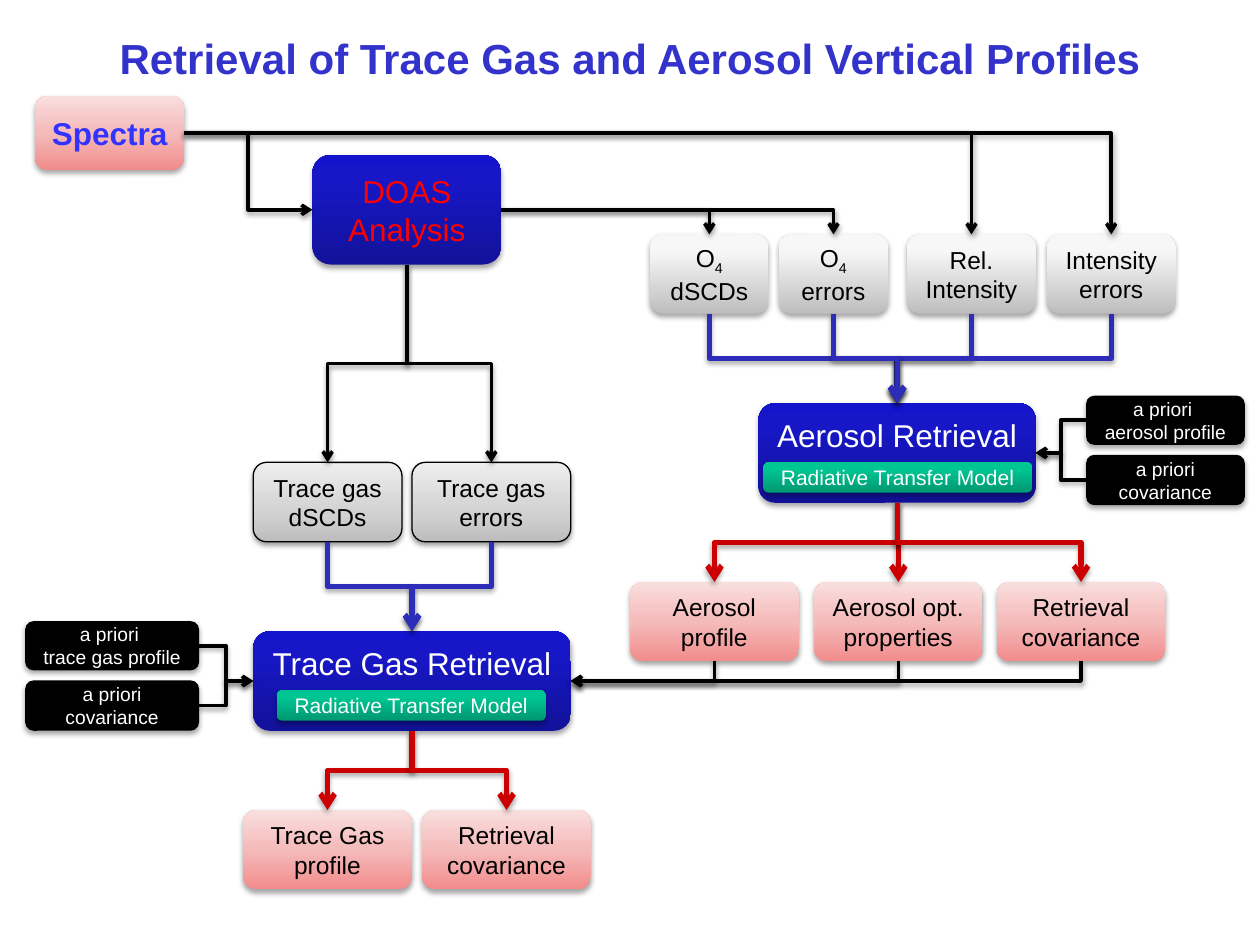
from dataclasses import dataclass
from typing import NamedTuple

import lxml.etree
import pptx
import pptx.dml.color
import pptx.enum.shapes
import pptx.enum.text
import pptx.oxml.ns
import pptx.util

Inches = pptx.util.Inches
Pt = pptx.util.Pt
qn = pptx.oxml.ns.qn
MID = pptx.enum.text.MSO_ANCHOR.MIDDLE
CENTER = pptx.enum.text.PP_ALIGN.CENTER
FORM = pptx.enum.shapes.MSO_SHAPE.FLOWCHART_ALTERNATE_PROCESS
ELBOW = pptx.enum.shapes.MSO_CONNECTOR.ELBOW


@dataclass(frozen=True)
class Look:
    stops: tuple
    size: int
    ink: str = "000000"
    bold: bool = False
    edge: bool = False
    foot: float = 0.05


@dataclass(frozen=True)
class Box:
    text: str
    look: Look
    x: float
    y: float
    w: float
    h: float

    def side(self, name: str) -> tuple:
        fx, fy = {"t": (0.5, 0), "b": (0.5, 1), "l": (0, 0.5), "r": (1, 0.5)}[name]
        return self.x + fx * self.w, self.y + fy * self.h


class Pen(NamedTuple):
    color: str
    width: float
    end: str
    shade: tuple


class Wire(NamedTuple):
    start: str
    out: str
    goal: str
    into: str
    pen: Pen


SOFT, FIRM = (35, 1.8), (38, 1.6)
FLOW = Pen("000000", 2, "tailEnd", FIRM)
FEED = Pen("2D2DB9", 3, "tailEnd", SOFT)
YIELD = Pen("CC0000", 3, "headEnd", SOFT)

BLUE = ((0, "12129A"), (80, "1717C8"), (100, "1414CC"))
ROSE = ((0, "F28C8C"), (50, "F5BABA"), (100, "F9DEDE"))
SOURCE = Look(ROSE, 18, "3333FF", bold=True)
STEP = Look(BLUE, 18, "FF0000")
CORE = Look(BLUE, 18, "FFFFFF", foot=0.33)
MODEL = Look(((0, "009872"), (80, "00C694"), (100, "00C795")), 12, "FFFFFF")
DATA = Look(((0, "BEBEBE"), (80, "F7F7F7"), (100, "F8F8F8")), 14)
GAS = Look(((0, "BDBDBD"), (35, "D1D1D1"), (100, "EEEEEE")), 14, edge=True)
PRIOR = Look(((0, "000000"),), 11, "FFFFFF")
RESULT = Look(ROSE, 14)

BOXES = {
    "rel": Box("Rel. Intensity", DATA, 7.2, 1.86, 1.02, 0.63),
    "noise": Box("Intensity errors", DATA, 8.31, 1.86, 1.02, 0.63),
    "scd": Box("O|4 |dSCDs", DATA, 5.16, 1.86, 0.94, 0.63),
    "err": Box("O|4 |errors", DATA, 6.18, 1.86, 0.87, 0.63),
    "aero": Box("Aerosol Retrieval", CORE, 6.02, 3.2, 2.2, 0.79),
    "aero model": Box("Radiative Transfer Model", MODEL, 6.06, 3.67, 2.13, 0.24),
    "aero prior": Box("a priori \naerosol profile", PRIOR, 8.62, 3.14, 1.26, 0.39),
    "aero cov": Box("a priori covariance", PRIOR, 8.62, 3.61, 1.26, 0.4),
    "shape": Box("Aerosol profile", RESULT, 5, 4.62, 1.34, 0.63),
    "optic": Box("Aerosol opt. properties", RESULT, 6.46, 4.62, 1.34, 0.63),
    "spread": Box("Retrieval covariance", RESULT, 7.91, 4.62, 1.34, 0.63),
    "gas scd": Box("Trace gas dSCDs", GAS, 2.01, 3.67, 1.18, 0.63),
    "gas err": Box("Trace gas errors", GAS, 3.27, 3.67, 1.26, 0.63),
    "gas": Box("Trace Gas Retrieval", CORE, 2.01, 5.01, 2.52, 0.79),
    "gas model": Box("Radiative Transfer Model", MODEL, 2.2, 5.48, 2.13, 0.24),
    "gas prior": Box("a priori \ntrace gas profile", PRIOR, 0.2, 4.93, 1.38, 0.39),
    "gas cov": Box("a priori covariance", PRIOR, 0.2, 5.4, 1.38, 0.4),
    "gas shape": Box("Trace Gas profile", RESULT, 1.93, 6.43, 1.34, 0.63),
    "gas spread": Box("Retrieval covariance", RESULT, 3.35, 6.43, 1.34, 0.63),
    "doas": Box("DOAS Analysis", STEP, 2.48, 1.23, 1.5, 0.87),
    "spectra": Box("Spectra", SOURCE, 0.28, 0.76, 1.18, 0.59),
}

LINKS = [
    (("aero prior", "aero cov"), "l", ("aero",), "r", FLOW),
    (("rel", "noise", "scd", "err"), "b", ("aero",), "t", FEED),
    (("optic", "shape", "spread"), "t", ("aero",), "b", YIELD),
    (("gas prior", "gas cov"), "r", ("gas",), "l", FLOW),
    (("gas scd", "gas err"), "b", ("gas",), "t", FEED),
    (("gas shape", "gas spread"), "t", ("gas",), "b", YIELD),
    (("spread", "shape", "optic"), "b", ("gas",), "r", FLOW),
    (("spectra",), "r", ("doas",), "l", FLOW),
    (("doas",), "r", ("err", "scd"), "t", FLOW),
    (("doas",), "b", ("gas scd", "gas err"), "t", FLOW),
    (("spectra",), "r", ("rel", "noise"), "t", FLOW),
]
WIRES = [Wire(start, out, goal, into, pen)
         for starts, out, goals, into, pen in LINKS
         for start in starts for goal in goals]


def hue(code: str) -> pptx.dml.color.RGBColor:
    return pptx.dml.color.RGBColor.from_string(code)


def apply(item, form: dict) -> None:
    for key, value in form.items():
        setattr(item, key, value)


def style(font, size: float, ink: str, bold: bool) -> None:
    apply(font, {"name": "Arial", "size": Pt(size), "bold": bold})
    font.color.rgb = hue(ink)


def add(node, tag: str, **traits):
    return lxml.etree.SubElement(node, qn(tag), {k: str(v) for k, v in traits.items()})


def shade(node, depth: tuple) -> None:
    alpha, dist = depth
    drop = add(add(node, "a:effectLst"), "a:outerShdw", blurRad=Pt(3.1),
               dist=Pt(dist), dir=5400000, rotWithShape=0)
    add(add(drop, "a:srgbClr", val="000000"), "a:alpha", val=alpha * 1000)


def paint(fill, stops: tuple) -> None:
    if len(stops) == 1:
        fill.solid()
        fill.fore_color.rgb = hue(stops[0][1])
        return
    fill.gradient()
    fill.gradient_angle = 90
    chain = fill._fill._gradFill.find(qn("a:gsLst"))
    for old in list(chain):
        chain.remove(old)
    for place, code in stops:
        add(add(chain, "a:gs", pos=place * 1000), "a:srgbClr", val=code)


def draw_box(slide, box: Box) -> None:
    look = box.look
    shape = slide.shapes.add_shape(FORM, *map(Inches, (box.x, box.y, box.w, box.h)))
    paint(shape.fill, look.stops)
    if look.edge:
        shape.line.color.rgb = hue("000000")
        shape.line.width = Pt(0.75)
    else:
        shape.line.fill.background()
    shade(shape._element.spPr, FIRM if look.edge else SOFT)
    frame = shape.text_frame
    apply(frame, {"word_wrap": True, "vertical_anchor": MID,
                  "margin_bottom": Inches(look.foot)})
    para = frame.paragraphs[0]
    para.alignment = CENTER
    for row, line in enumerate(box.text.split("\n")):
        if row:
            para.add_line_break()
        for part, words in enumerate(line.split("|")):
            run = para.add_run()
            run.text = words
            style(run.font, look.size, look.ink, look.bold)
            if part == 1:
                run.font._element.set("baseline", "-25000")


def draw_wire(slide, wire: Wire) -> None:
    ax, ay = BOXES[wire.start].side(wire.out)
    bx, by = BOXES[wire.goal].side(wire.into)
    dx, dy = bx - ax, by - ay
    mx, my = (ax + bx) / 2, (ay + by) / 2
    steep = wire.out in "tb"
    turn = 1 if dx * dy < -0.01 else -1
    vx, vy = (turn * dy, -turn * dx) if steep else (dx, dy)
    ends = mx - vx / 2, my - vy / 2, mx + vx / 2, my + vy / 2
    line = slide.shapes.add_connector(ELBOW, *map(Inches, ends))
    props = line._element.spPr
    if steep:
        props.find(qn("a:xfrm")).set("rot", "5400000" if turn == 1 else "16200000")
    if steep != (wire.into in "tb"):
        props.find(qn("a:prstGeom")).set("prst", "bentConnector2")
    line.line.color.rgb = hue(wire.pen.color)
    line.line.width = Pt(wire.pen.width)
    add(props.find(qn("a:ln")), "a:" + wire.pen.end, type="arrow")
    shade(props, wire.pen.shade)


def main() -> None:
    deck = pptx.Presentation()
    apply(deck, {"slide_width": Inches(10), "slide_height": Inches(7.5)})
    slide = deck.slides.add_slide(deck.slide_layouts[5])
    title = slide.shapes.title
    apply(title, {"left": Inches(0.75), "top": Inches(0),
                  "width": Inches(8.5), "height": Inches(0.92)})
    title.text_frame.text = "Retrieval of Trace Gas and Aerosol Vertical Profiles"
    title.text_frame.vertical_anchor = MID
    para = title.text_frame.paragraphs[0]
    para.alignment = CENTER
    style(para.runs[0].font, 24, "3333CC", True)
    for box in BOXES.values():
        draw_box(slide, box)
    for wire in WIRES:
        draw_wire(slide, wire)
    deck.save("out.pptx")


if __name__ == "__main__":
    main()
